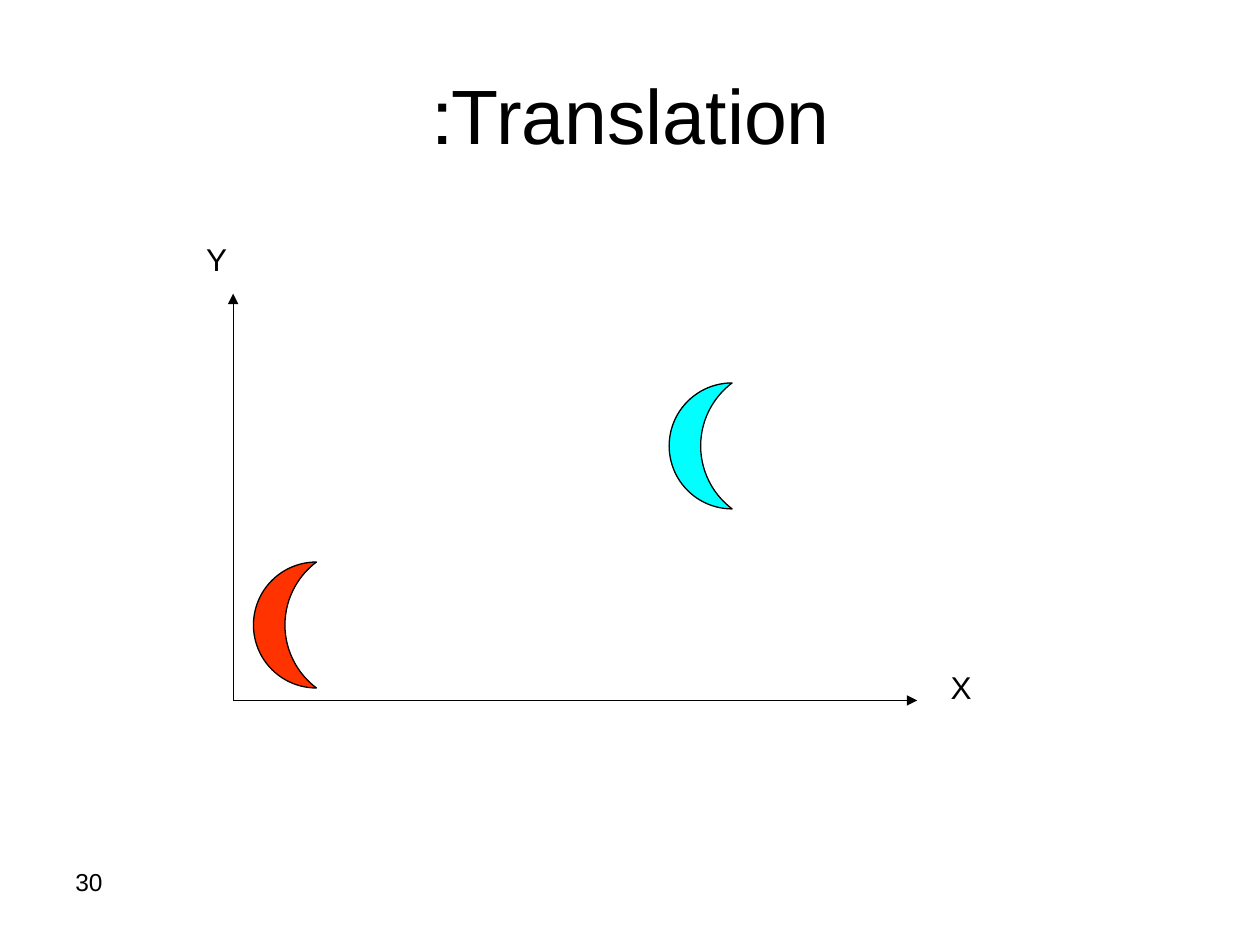
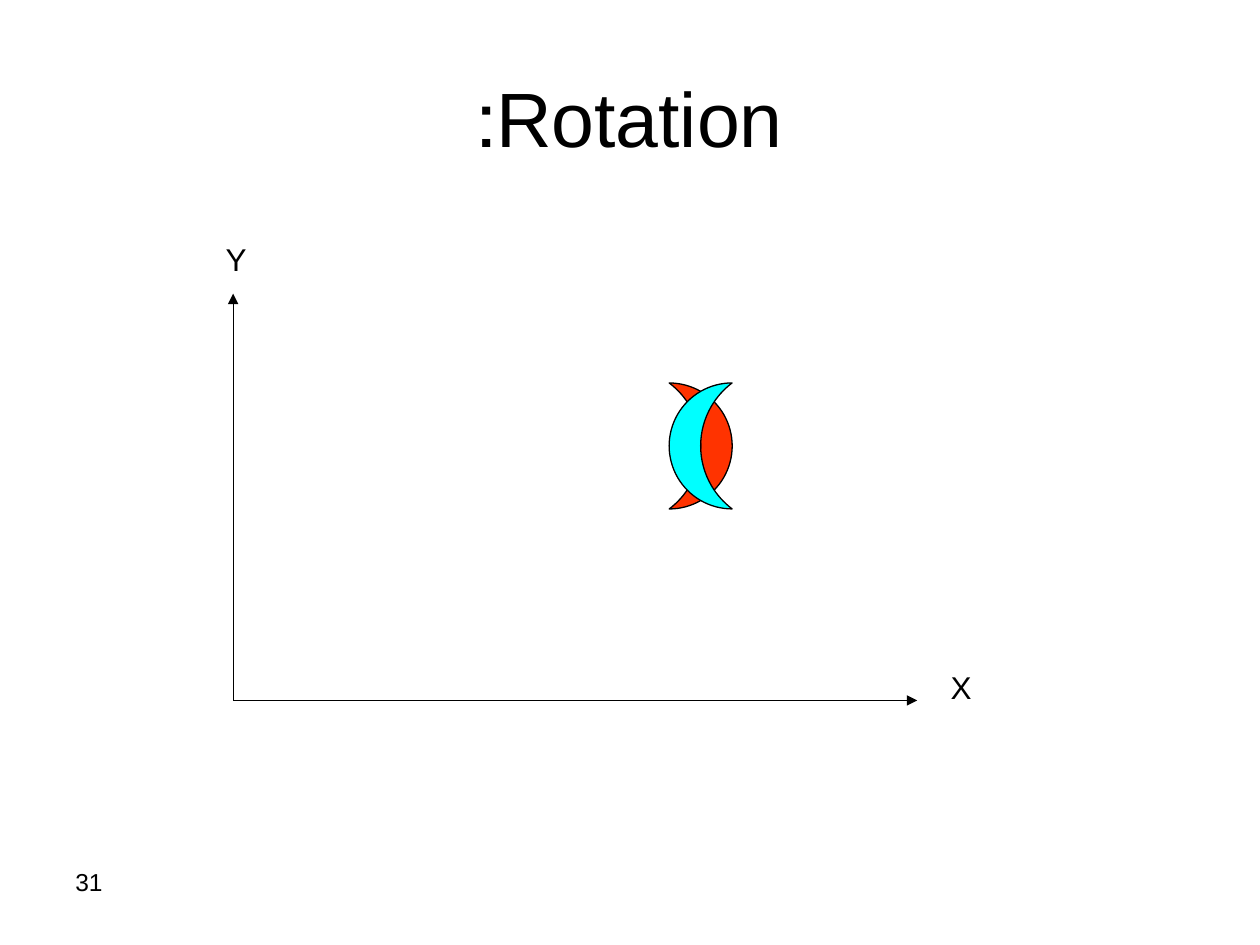
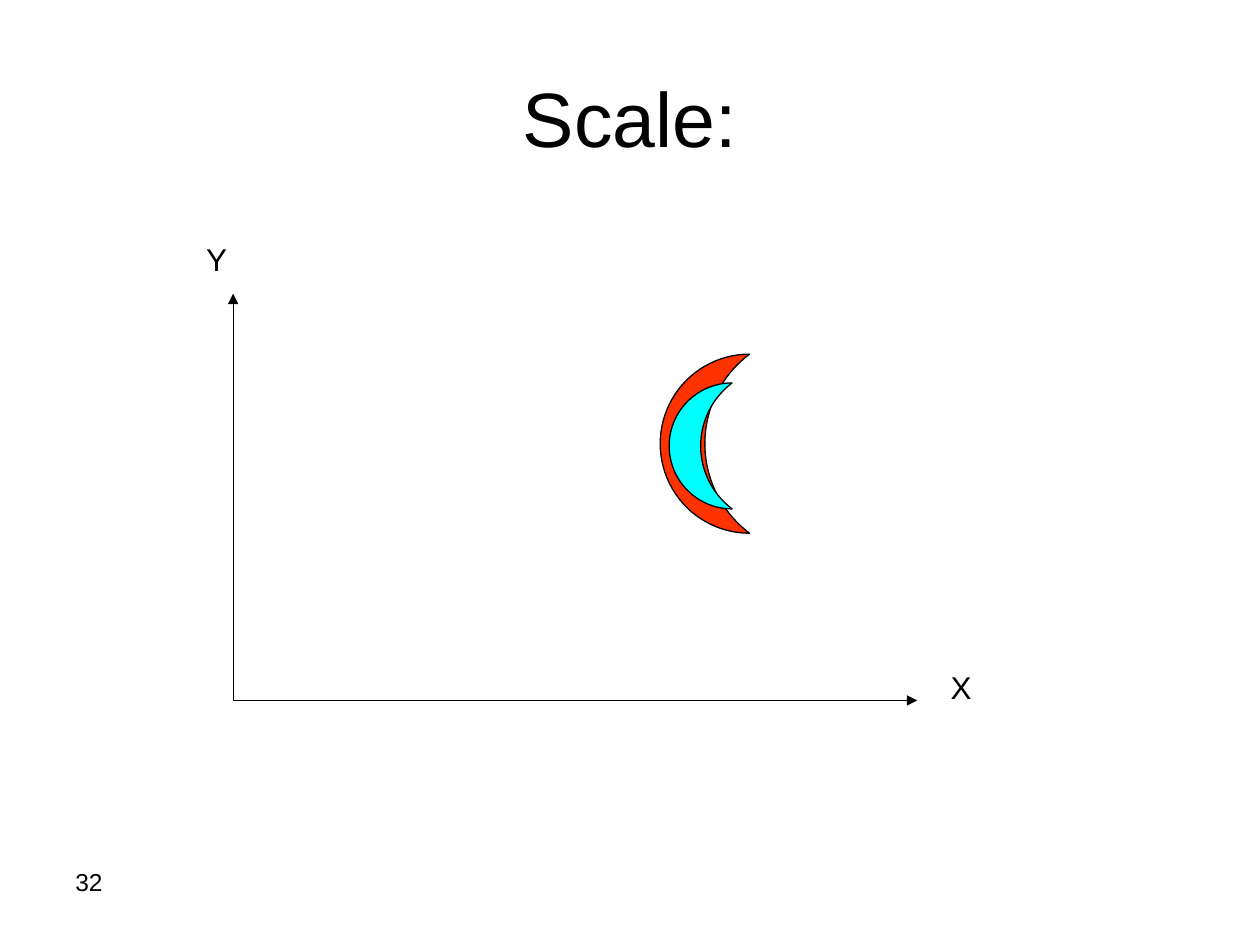
from pptx import Presentation
from pptx import util as u
from pptx.dml.color import RGBColor
from pptx.enum import shapes, text
from pptx.oxml.ns import qn
from lxml import etree

BLACK = RGBColor(0x00, 0x00, 0x00)
WHITE = RGBColor(0xFF, 0xFF, 0xFF)
RED = RGBColor(0xFF, 0x33, 0x00)
CYAN = RGBColor(0x00, 0xFF, 0xFF)

FONT = "Arial"
LEFT, CENTER, RIGHT = (text.PP_ALIGN.LEFT, text.PP_ALIGN.CENTER,
                       text.PP_ALIGN.RIGHT)
ORIGIN = (4.7, 14.12)
X_END = (18.49, 14.12)
Y_END = (4.7, 5.92)
MOON_SIZE = (1.27, 2.54)
MOVED = (13.49, 7.72, *MOON_SIZE)


class Deck:
    def __init__(self):
        self.prs = Presentation()
        self.prs.slide_width = u.Cm(25.4)
        self.prs.slide_height = u.Cm(19.05)

    def new_slide(self):
        self.s = self.prs.slides.add_slide(self.prs.slide_layouts[5])
        self.s.background.fill.solid()
        self.s.background.fill.fore_color.rgb = WHITE

    def put_text(self, sp, words, size, align=LEFT, rtl=False):
        tf = sp.text_frame
        tf.text = words
        p = tf.paragraphs[0]
        p.alignment = align
        if rtl:
            p._p.get_or_add_pPr().set("rtl", "1")
        font = p.runs[0].font
        font.name, font.size, font.color.rgb = FONT, u.Pt(size), BLACK
        return tf

    def title(self, words, left=1.27, top=0.76, rtl=True):
        sp = self.s.shapes.title
        sp.left, sp.top = u.Cm(left), u.Cm(top)
        sp.width, sp.height = u.Cm(22.86), u.Cm(3.18)
        tf = self.put_text(sp, words, 44, CENTER, rtl)
        tf.vertical_anchor = text.MSO_ANCHOR.MIDDLE
        tf.auto_size = text.MSO_AUTO_SIZE.NONE

    def number(self, value):
        sp = self.s.shapes.add_textbox(*map(u.Cm, (1.27, 17.35, 5.92, 1.32)))
        self.put_text(sp, str(value), 14).word_wrap = True

    def label(self, words, left, top, align=RIGHT, rtl=True):
        sp = self.s.shapes.add_textbox(*map(u.Cm, (left, top, 0.94, 1.02)))
        tf = self.put_text(sp, words, 18, align, rtl)
        tf.word_wrap = False
        tf.auto_size = text.MSO_AUTO_SIZE.SHAPE_TO_FIT_TEXT

    def outline(self, sp):
        sp.line.color.rgb = BLACK
        sp.line.width = u.Pt(0.75)

    def arrow(self, start, end):
        c = self.s.shapes.add_connector(
            shapes.MSO_CONNECTOR.STRAIGHT, *map(u.Cm, start + end))
        self.outline(c)
        props = c._element.spPr
        etree.SubElement(props.find(qn("a:ln")), qn("a:tailEnd"),
                         type="triangle")
        etree.SubElement(props, qn("a:effectLst"))

    def moon(self, box, color, rotation=0):
        sp = self.s.shapes.add_shape(shapes.MSO_SHAPE.MOON, *map(u.Cm, box))
        sp.rotation = rotation
        sp.shadow.inherit = False
        sp.fill.solid()
        sp.fill.fore_color.rgb = color
        self.outline(sp)

    def transform(self, number, title, red_box, rotation=0, y_label=None):
        self.new_slide()
        self.number(number)
        self.title(**title)
        self.arrow(ORIGIN, Y_END)
        self.arrow(ORIGIN, X_END)
        self.moon(red_box, RED, rotation)
        self.moon(MOVED, CYAN)
        self.label("X", 18.9, 13.34)
        self.label("Y", **{"left": 3.89, "top": 4.72, **(y_label or {})})


def main():
    deck = Deck()
    deck.transform(30, {"words": "Translation:", "left": 1.3, "top": 0.71},
                   (5.11, 11.33, *MOON_SIZE))
    deck.transform(31, {"words": "Rotation:"}, MOVED, rotation=180,
                   y_label={"left": 4.29, "align": CENTER, "rtl": False})
    deck.transform(32, {"words": "Scale:", "rtl": False},
                   (13.31, 7.14, 1.8, 3.61))
    deck.prs.save("out.pptx")


if __name__ == "__main__":
    main()
